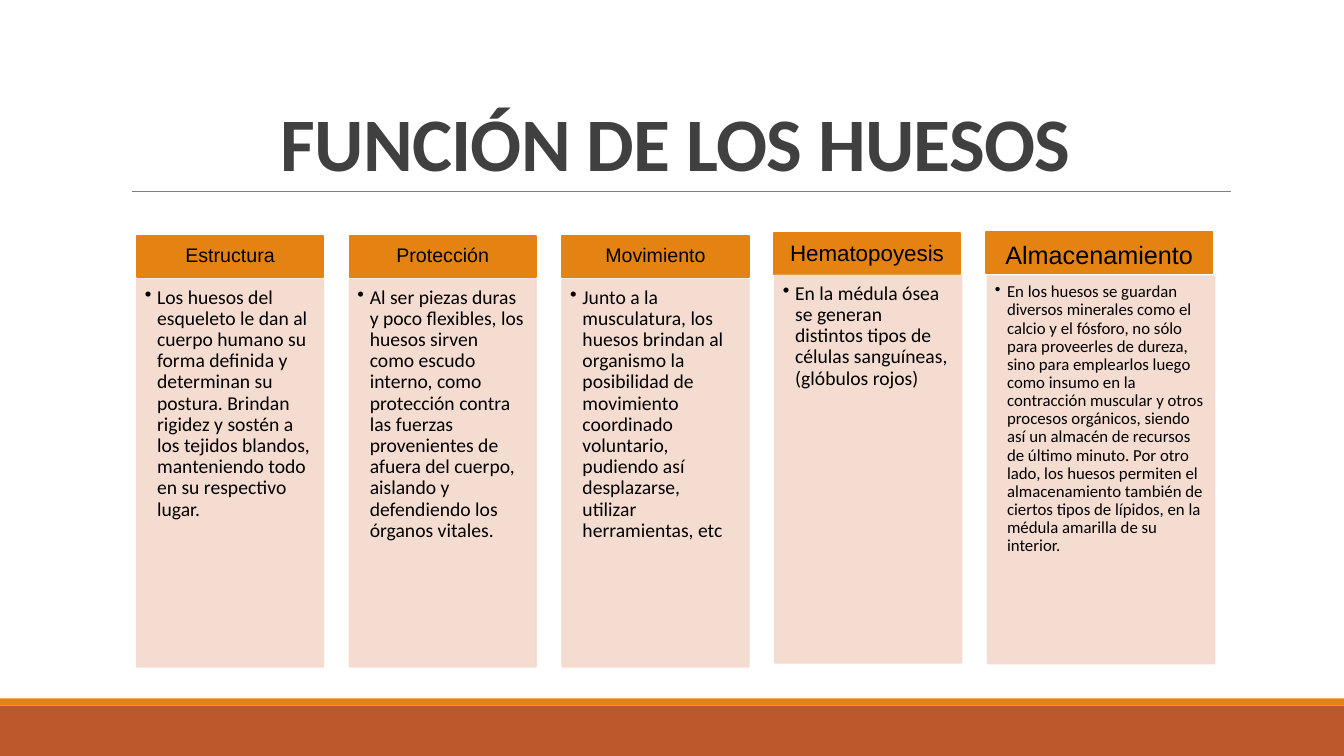
import pptx
import pptx.util
import pptx.dml.color
import pptx.enum.shapes
import pptx.enum.text
import pptx.oxml
import pptx.oxml.ns

Cm = pptx.util.Cm
Pt = pptx.util.Pt
RGBColor = pptx.dml.color.RGBColor
Align = pptx.enum.text.PP_ALIGN
Anchor = pptx.enum.text.MSO_ANCHOR
qn = pptx.oxml.ns.qn

TITLE = "FUNCIÓN DE LOS HUESOS"
CARDS = [
    dict(head="Estructura", size=14, width=4.7, top=5.94, shift=0, drop=7.04, small=14,
         body="Los huesos del esqueleto le dan al cuerpo humano su forma definida y determinan su "
              "postura. Brindan rigidez y sostén a los tejidos blandos, manteniendo todo en su "
              "respectivo lugar."),
    dict(head="Protección", size=14, width=4.7, top=5.94, shift=0, drop=7.04, small=14,
         body="Al ser piezas duras y poco flexibles, los huesos sirven como escudo interno, como "
              "protección contra las fuerzas provenientes de afuera del cuerpo, aislando y "
              "defendiendo los órganos vitales."),
    dict(head="Movimiento", size=14, width=4.7, top=5.94, shift=0, drop=7.04, small=14,
         body="Junto a la musculatura, los huesos brindan al organismo la posibilidad de "
              "movimiento coordinado voluntario, pudiendo así desplazarse, utilizar "
              "herramientas, etc"),
    dict(head="Hematopoyesis", size=16, width=4.7, top=5.87, shift=0.03, drop=6.94, small=14,
         body="En la médula ósea se generan distintos tipos de células sanguíneas, "
              "(glóbulos rojos)"),
    dict(head="Almacenamiento", size=18, width=5.72, top=5.84, shift=0.05, drop=6.96, small=12,
         body="En los huesos se guardan diversos minerales como el calcio y el fósforo, no sólo "
              "para proveerles de dureza, sino para emplearlos luego como insumo en la "
              "contracción muscular y otros procesos orgánicos, siendo así un almacén de "
              "recursos de último minuto. Por otro lado, los huesos permiten el almacenamiento "
              "también de ciertos tipos de lípidos, en la médula amarilla de su interior."),
]
LEFT, STEP = 3.45, 5.36
HEAD_H, BODY_H = 1.05, 9.76
WIDE, HIGH = 33.87, 19.05

RUST = RGBColor(0xBD, 0x58, 0x2C)
ORANGE = RGBColor(0xE4, 0x83, 0x12)
PEACH = RGBColor(0xF5, 0xD9, 0xCC)
GRAY = RGBColor(0x80, 0x80, 0x80)
DARK = RGBColor(0x40, 0x40, 0x40)
BLACK = RGBColor(0, 0, 0)

deck = pptx.Presentation()
deck.slide_width, deck.slide_height = Cm(WIDE), Cm(HIGH)
slide = deck.slides.add_slide(deck.slide_layouts[5])


def write(frame, text, size, font="Calibri", color=BLACK, bold=False, align=Align.LEFT,
          anchor=Anchor.TOP, pads=(0.25, 0.13, 0.25, 0.13), lead=0.9, track=0, bullet=False):
    frame.word_wrap = True
    frame.auto_size = pptx.enum.text.MSO_AUTO_SIZE.NONE
    frame.vertical_anchor = anchor
    frame.margin_left, frame.margin_top, frame.margin_right, frame.margin_bottom = map(Cm, pads)
    para = frame.paragraphs[0]
    para.alignment, para.line_spacing = align, lead
    para.space_before = Pt(0)
    run = para.add_run()
    run.text = text
    run.font.name, run.font.size, run.font.bold = font, Pt(size), bold
    run.font.color.rgb = color
    if track:
        run.font._element.set("spc", str(int(track * 100)))
    if bullet:
        props = para._p.get_or_add_pPr()
        props.set("marL", str(Cm(0.31)))
        props.set("indent", str(-Cm(0.31)))
        mark = pptx.oxml.parse_xml(f'<a:buChar {pptx.oxml.ns.nsdecls("a")} char="•"/>')
        props.append(mark)


def box(left, top, width, height, fill, edge=False, solid=100):
    kind = pptx.enum.shapes.MSO_SHAPE.RECTANGLE
    shape = slide.shapes.add_shape(kind, Cm(left), Cm(top), Cm(width), Cm(height))
    shape.shadow.inherit = False
    shape.fill.solid()
    shape.fill.fore_color.rgb = fill
    if edge:
        shape.line.color.rgb = fill
        shape.line.width = Pt(1.25)
    else:
        shape.line.fill.background()
    if solid < 100:
        for tint in shape._element.spPr.iter(qn("a:srgbClr")):
            tint.append(tint.makeelement(qn("a:alpha"), {"val": str(solid * 1000)}))
    return shape


box(0, 17.78, WIDE, 1.27, RUST)
box(0, 17.6, WIDE, 0.18, ORANGE)

rule = slide.shapes.add_connector(pptx.enum.shapes.MSO_CONNECTOR.STRAIGHT,
                                  Cm(3.33), Cm(4.83), Cm(31.01), Cm(4.83))
rule.line.color.rgb = GRAY
rule.line.width = Pt(0.5)
look = rule._element.spPr
look.append(look.makeelement(qn("a:effectLst"), {}))

title = slide.shapes.title
title.left, title.top, title.width, title.height = Cm(3.05), Cm(2.59), Cm(27.94), Cm(2.24)
write(title.text_frame, TITLE, size=54, color=DARK, bold=True, align=Align.CENTER,
      anchor=Anchor.BOTTOM, lead=0.85, track=-0.5)

for spot, card in enumerate(CARDS):
    left = LEFT + spot * STEP
    last = spot == len(CARDS) - 1
    head = box(left - card["shift"], card["top"], card["width"], HEAD_H, ORANGE, edge=True)
    write(head.text_frame, card["head"], size=card["size"], font="Arial", align=Align.CENTER,
          anchor=Anchor.MIDDLE, pads=(0.25, 0.2 if last else 0, 0.25, 0))
    body = box(left, card["drop"], card["width"], BODY_H, PEACH, edge=True, solid=90)
    write(body.text_frame, card["body"], size=card["small"], bullet=True,
          pads=(0.18, 0.18, 0.23, 0.25) if last else (0.2, 0.2, 0.28, 0.3))

deck.save("out.pptx")
